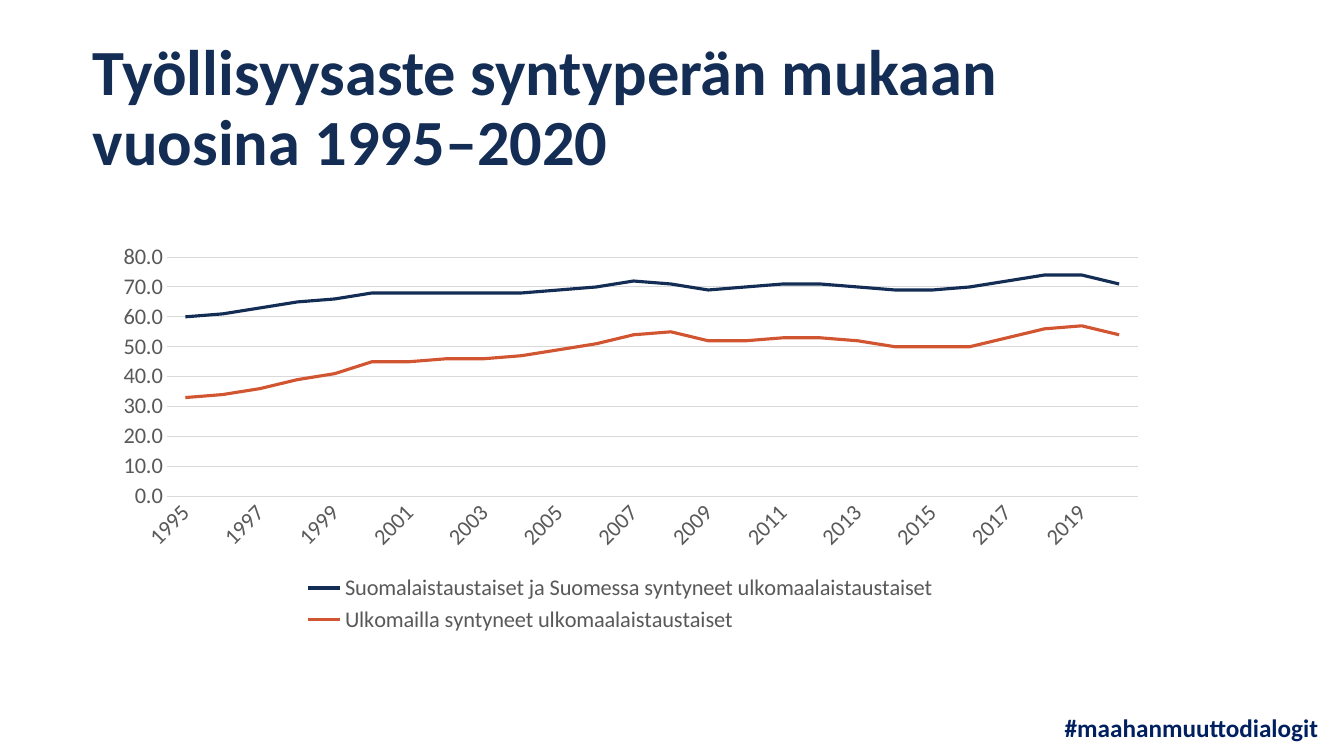
"""Build a slide with a line chart of employment rates by origin, 1995–2020."""
import pptx
import pptx.chart.data
import pptx.dml.color
import pptx.enum.chart
import pptx.enum.text
import pptx.oxml
import pptx.oxml.ns
import pptx.util
from dataclasses import dataclass

Inches = pptx.util.Inches


@dataclass(frozen=True)
class Theme:
    font: str = "Calibri"
    navy: str = "142D55"
    orange: str = "D25532"
    tag: str = "002060"
    label: str = "595959"
    grid: str = "D9D9D9"
    title_size: int = 46
    tag_size: int = 18
    chart_size: int = 16
    grid_width: float = 0.75
    series_width: float = 2.25


theme = Theme()


def style_font(font, size, color, bold=False):
    font.name = theme.font
    font.size = pptx.util.Pt(size)
    font.bold = bold
    font.color.rgb = pptx.dml.color.RGBColor.from_string(color)


def write_text(box, text, *, size, color, spacing, anchor):
    frame = box.text_frame
    frame.word_wrap = True
    frame.auto_size = pptx.enum.text.MSO_AUTO_SIZE.NONE
    frame.vertical_anchor = anchor
    frame.margin_left = frame.margin_right = 0
    frame.margin_top = frame.margin_bottom = 0
    para = frame.paragraphs[0]
    para.alignment = pptx.enum.text.PP_ALIGN.LEFT
    para.line_spacing = spacing
    span = para.add_run()
    span.text = text
    style_font(span.font, size, color, bold=True)


deck = pptx.Presentation()
deck.slide_width = Inches(13.33)
deck.slide_height = Inches(7.5)
page = deck.slides.add_slide(deck.slide_layouts.get_by_name("Title Only"))

title = page.shapes.title
title.left, title.top = Inches(0.92), Inches(0.42)
title.width, title.height = Inches(10.47), Inches(1.36)
write_text(title, "Työllisyysaste syntyperän mukaan vuosina 1995–2020",
           size=theme.title_size, color=theme.navy, spacing=0.9,
           anchor=pptx.enum.text.MSO_ANCHOR.BOTTOM)

hashtag = page.shapes.add_textbox(Inches(10.56), Inches(7.04), Inches(2.63), Inches(0.23))
write_text(hashtag, "#maahanmuuttodialogit",
           size=theme.tag_size, color=theme.tag, spacing=1.1,
           anchor=pptx.enum.text.MSO_ANCHOR.TOP)

employment = [
    ("Suomalaistaustaiset ja Suomessa syntyneet ulkomaalaistaustaiset", theme.navy,
     [60, 61, 63, 65, 66, 68, 68, 68, 68, 68, 69, 70, 72,
      71, 69, 70, 71, 71, 70, 69, 69, 70, 72, 74, 74, 71]),
    ("Ulkomailla syntyneet ulkomaalaistaustaiset", theme.orange,
     [33, 34, 36, 39, 41, 45, 45, 46, 46, 47, 49, 51, 54,
      55, 52, 52, 53, 53, 52, 50, 50, 50, 53, 56, 57, 54]),
]
chart_data = pptx.chart.data.CategoryChartData(number_format="0.0")
chart_data.categories = [str(year) for year in range(1995, 2021)]
for name, color, rates in employment:
    chart_data.add_series(name, rates)

chart = page.shapes.add_chart(
    pptx.enum.chart.XL_CHART_TYPE.LINE,
    Inches(0.92), Inches(2.31), Inches(10.47), Inches(4.02), chart_data).chart
chart.has_title = False
style_font(chart.font, theme.chart_size, theme.label)

for series, (name, color, rates) in zip(chart.plots[0].series, employment):
    series.smooth = False
    series.marker.style = pptx.enum.chart.XL_MARKER_STYLE.NONE
    series.format.line.width = pptx.util.Pt(theme.series_width)
    series.format.line.color.rgb = pptx.dml.color.RGBColor.from_string(color)
chart.plots[0].vary_by_categories = False

year_axis, rate_axis = chart.category_axis, chart.value_axis
for axis in (year_axis, rate_axis):
    axis.major_tick_mark = axis.minor_tick_mark = pptx.enum.chart.XL_TICK_MARK.NONE
    style_font(axis.tick_labels.font, theme.chart_size, theme.label)
rate_axis.minimum_scale, rate_axis.maximum_scale, rate_axis.major_unit = 0, 80, 10
rate_axis.tick_labels.number_format = "0.0"
rate_axis.tick_labels.number_format_is_linked = False
rate_axis.format.line.fill.background()
rate_axis.has_major_gridlines = True
for line in (year_axis.format.line, rate_axis.major_gridlines.format.line):
    line.width = pptx.util.Pt(theme.grid_width)
    line.color.rgb = pptx.dml.color.RGBColor.from_string(theme.grid)

chart.has_legend = True
chart.legend.position = pptx.enum.chart.XL_LEGEND_POSITION.BOTTOM
chart.legend.include_in_layout = False
style_font(chart.legend.font, theme.chart_size, theme.label)

plot_area = chart.plots[0]._element.getparent()
for old_layout in plot_area.findall(pptx.oxml.ns.qn("c:layout")):
    plot_area.remove(old_layout)
plot_area.insert(0, pptx.oxml.parse_xml(
    f'<c:layout {pptx.oxml.ns.nsdecls("c")}><c:manualLayout>'
    '<c:layoutTarget val="inner"/><c:xMode val="edge"/><c:yMode val="edge"/>'
    '<c:x val="0.07"/><c:y val="0.06"/><c:w val="0.92"/><c:h val="0.59"/>'
    '</c:manualLayout></c:layout>'))

deck.save("out.pptx")
